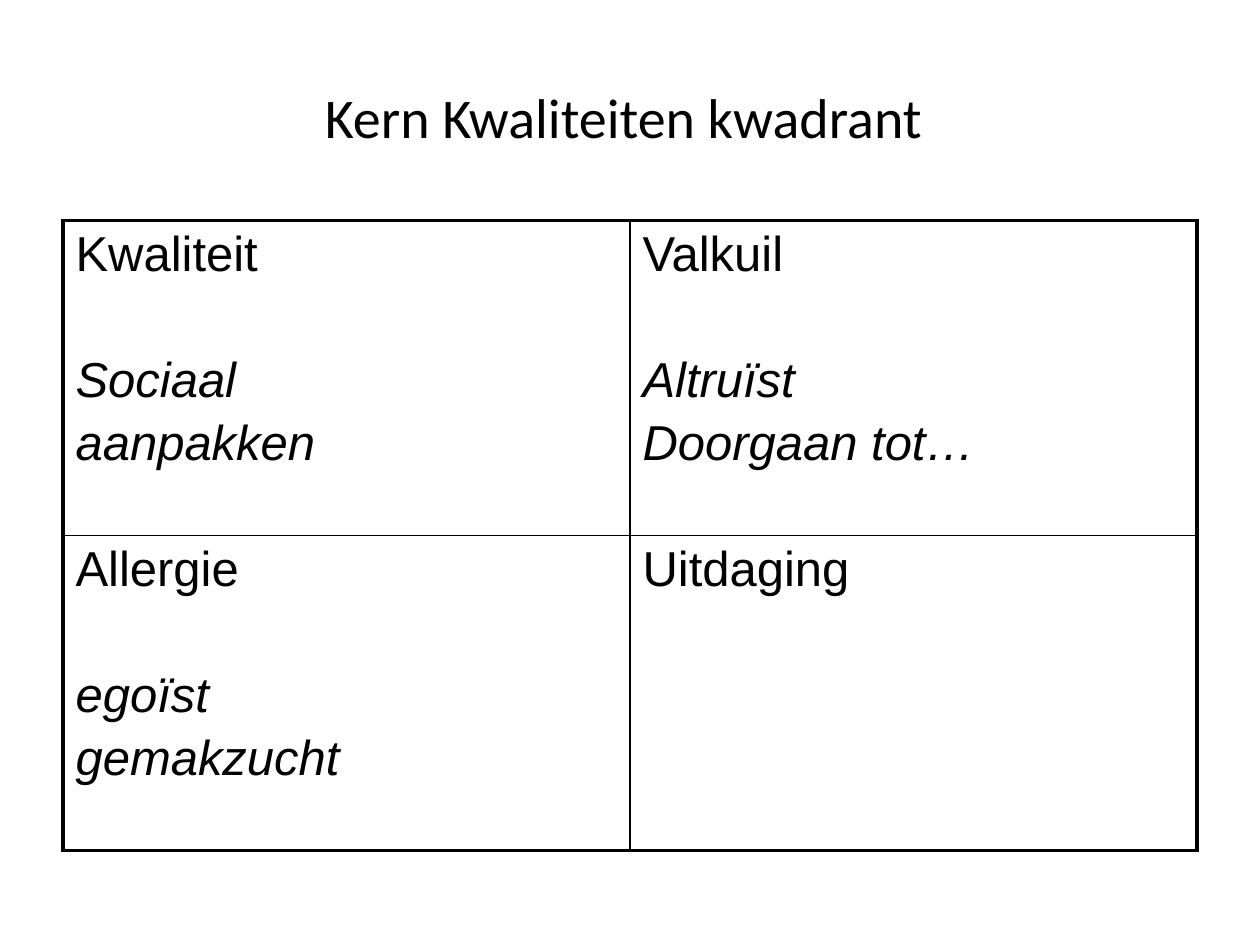
from lxml import etree
from pptx import Presentation
from pptx.dml.color import RGBColor
from pptx.enum.text import MSO_ANCHOR, PP_ALIGN
from pptx.oxml.ns import qn
from pptx.util import Inches, Pt

MIDDLE, TOP = MSO_ANCHOR.MIDDLE, MSO_ANCHOR.TOP
CENTER, LEFT = PP_ALIGN.CENTER, PP_ALIGN.LEFT
TITLE_ONLY = 5
WIDTH, HEIGHT = Inches(10), Inches(7.5)

QUADRANTS = [
    [("Kwaliteit", ["Sociaal", "aanpakken"]),
     ("Valkuil", ["Altruïst", "Doorgaan tot…"])],
    [("Allergie", ["egoïst", "gemakzucht"]),
     ("Uitdaging", [])],
]


def color(hex_value):
    return RGBColor.from_string(hex_value)


class QuadrantSlide:
    ink = "000000"
    title_font, body_font = "Calibri", "Arial"
    title_size, body_size = 32, 28
    outer_line, inner_line = 2.25, 1
    line_gap = 4.5
    heading_gap = 41.2  # one empty line between heading and examples

    def __init__(self, presentation):
        layout = presentation.slide_layouts[TITLE_ONLY]
        self.slide = presentation.slides.add_slide(layout)

    def box(self, left, top, width, height):
        """Turn shares of the slide's size into lengths."""
        return (int(left * WIDTH), int(top * HEIGHT),
                int(width * WIDTH), int(height * HEIGHT))

    def style(self, paragraph, font_name, size, align, italic=False):
        paragraph.alignment = align
        font = paragraph.font
        font.name, font.size, font.italic = font_name, Pt(size), italic
        font.color.rgb = color(self.ink)

    def title(self, text, *area):
        heading = self.slide.shapes.title
        heading.left, heading.top, heading.width, heading.height = self.box(*area)
        frame = heading.text_frame
        frame.text = text
        frame.vertical_anchor = MIDDLE
        self.style(frame.paragraphs[0], self.title_font, self.title_size, CENTER)

    def table(self, rows, *area):
        row_count, column_count = len(rows), len(rows[0])
        table = self.slide.shapes.add_table(
            row_count, column_count, *self.box(*area)).table
        table.first_row = table.horz_banding = False
        for r, row in enumerate(rows):
            for c, (heading, examples) in enumerate(row):
                cell = table.cell(r, c)
                self.fill_cell(cell, heading, examples)
                self.border(cell, {
                    "L": c == 0, "R": c == column_count - 1,
                    "T": r == 0, "B": r == row_count - 1})
                cell.fill.background()

    def fill_cell(self, cell, heading, examples):
        cell.vertical_anchor = TOP
        frame = cell.text_frame
        frame.text = "\n".join([heading, *examples])
        for index, paragraph in enumerate(frame.paragraphs):
            self.style(paragraph, self.body_font, self.body_size, LEFT, index > 0)
            gap = self.heading_gap if index == 1 else self.line_gap
            paragraph.space_before = Pt(gap)

    def border(self, cell, outer_sides):
        """Draw each side, heavier where it lies on the table's outline."""
        properties = cell._tc.get_or_add_tcPr()
        for side, is_outer in outer_sides.items():
            weight = self.outer_line if is_outer else self.inner_line
            line = etree.SubElement(properties, qn(f"a:ln{side}"), w=str(Pt(weight)))
            fill = etree.SubElement(line, qn("a:solidFill"))
            etree.SubElement(fill, qn("a:srgbClr"), val=self.ink)


def main():
    presentation = Presentation()
    presentation.slide_width, presentation.slide_height = WIDTH, HEIGHT
    page = QuadrantSlide(presentation)
    page.title("Kern Kwaliteiten kwadrant ", 0.05, 0.04, 0.9, 1 / 6)
    page.table(QUADRANTS, 0.05, 7 / 30, 0.9, 2 / 3)
    presentation.save("out.pptx")


if __name__ == "__main__":
    main()
